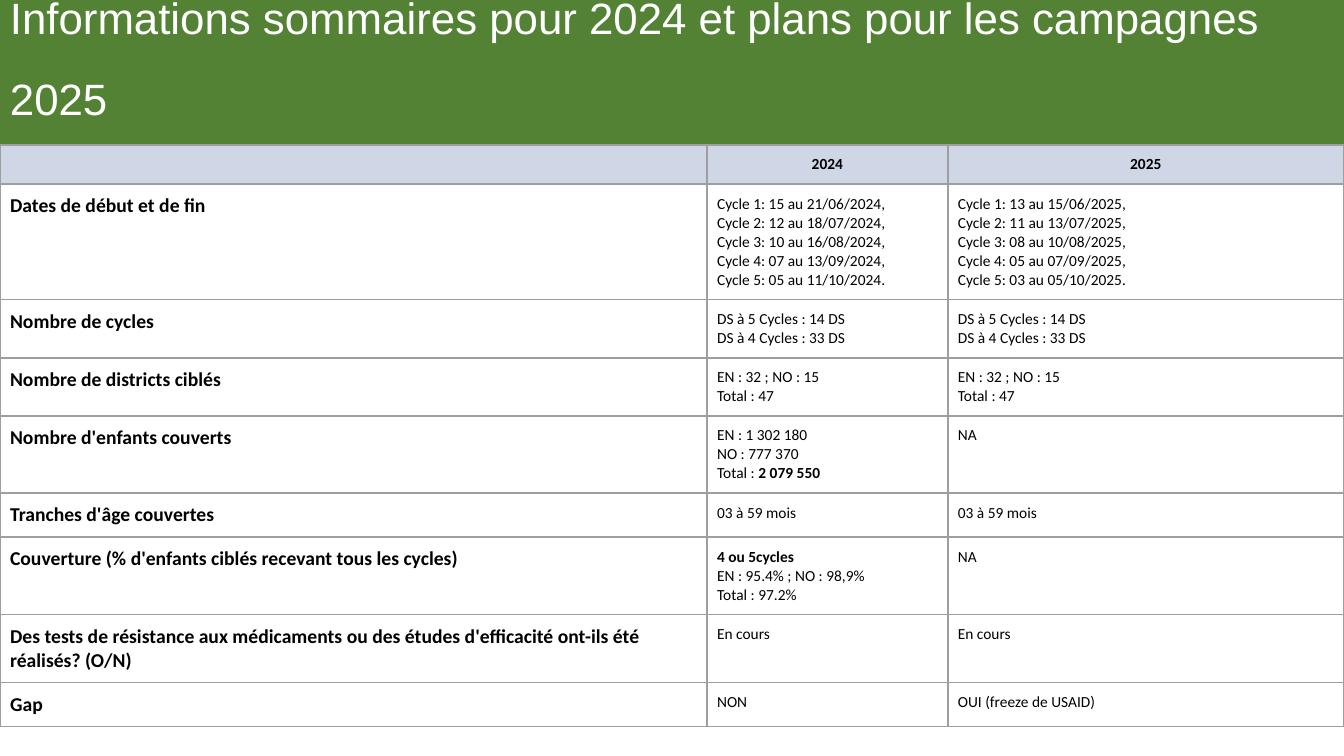
"""Build the slide that sums up the 2024 campaign and the plans for 2025."""
import lxml.etree
import pptx
import pptx.dml.color
import pptx.enum.shapes
import pptx.enum.text
import pptx.oxml.ns
import pptx.util

Pt = pptx.util.Pt
qn = pptx.oxml.ns.qn


def color(value):
    return pptx.dml.color.RGBColor.from_string(value)


def add_borders(cell, value, width):
    props = cell._tc.get_or_add_tcPr()
    for i, side in enumerate(("a:lnL", "a:lnR", "a:lnT", "a:lnB")):
        ln = lxml.etree.Element(qn(side), w=str(Pt(width)))
        fill = lxml.etree.SubElement(ln, qn("a:solidFill"))
        lxml.etree.SubElement(fill, qn("a:srgbClr"), val=value)
        props.insert(i, ln)


prs = pptx.Presentation()
prs.slide_width, prs.slide_height = Pt(960), Pt(540)
s = prs.slides.add_slide(prs.slide_layouts[6])

sp = s.shapes.add_shape(pptx.enum.shapes.MSO_SHAPE.RECTANGLE, 0, 0, Pt(960), Pt(104.4))
sp.shadow.inherit = False
sp.fill.solid()
sp.fill.fore_color.rgb = color("548235")
sp.line.fill.background()
tf = sp.text_frame
tf.word_wrap = True
tf.vertical_anchor = pptx.enum.text.MSO_ANCHOR.MIDDLE
p = tf.paragraphs[0]
p.alignment = pptx.enum.text.PP_ALIGN.LEFT
p.line_spacing = 0.9
r = p.add_run()
r.text = "Informations sommaires pour 2024 et plans pour les campagnes 2025"
r.font.name, r.font.size = "Arial", Pt(54)
r.font.color.rgb = color("FFFFFF")
r.font._element.set("baseline", "30000")

# Text between asterisks is bold.
rows = [
    (27.8, "", "*2024*", "*2025*"),
    (82, "*Dates de début et de fin*",
     "Cycle 1: 15 au 21/06/2024,\nCycle 2: 12 au 18/07/2024,\nCycle 3: 10 au 16/08/2024,\n"
     "Cycle 4: 07 au 13/09/2024,\nCycle 5: 05 au 11/10/2024.",
     "Cycle 1: 13 au 15/06/2025,\nCycle 2: 11 au 13/07/2025,\nCycle 3: 08 au 10/08/2025,\n"
     "Cycle 4: 05 au 07/09/2025,\nCycle 5: 03 au 05/10/2025."),
    (41.4, "*Nombre de cycles*",
     "DS à 5 Cycles : 14 DS\nDS à 4 Cycles : 33 DS", "DS à 5 Cycles : 14 DS\nDS à 4 Cycles : 33 DS"),
    (41.4, "*Nombre de districts ciblés*",
     "EN : 32 ; NO : 15\nTotal : 47", "EN : 32 ; NO : 15\nTotal : 47"),
    (55, "*Nombre d'enfants couverts*",
     "EN : 1 302 180\nNO : 777 370\nTotal : *2 079 550*", "NA"),
    (31.4, "*Tranches d'âge couvertes*", "03 à 59 mois", "03 à 59 mois"),
    (55, "*Couverture (% d'enfants ciblés recevant tous les cycles)*",
     "*4 ou 5cycles*\nEN : 95.4% ; NO : 98,9%\nTotal : 97.2%", "NA"),
    (48.6, "*Des tests de résistance aux médicaments ou des études d'efficacité "
     "ont-ils été réalisés? (O/N)*", "En cours", "En cours"),
    (31.4, "*Gap*", "NON", "OUI (freeze de USAID)"),
]
table = s.shapes.add_table(len(rows), 3, 0, Pt(103.6), Pt(960), Pt(414)).table
for column, width in zip(table.columns, (505, 172, 283)):
    column.width = Pt(width)

for i, (height, *texts) in enumerate(rows):
    table.rows[i].height = Pt(height)
    for j, text in enumerate(texts):
        cell = table.cell(i, j)
        cell.margin_left = cell.margin_right = cell.margin_top = cell.margin_bottom = Pt(7.2)
        if i == 0:
            cell.fill.solid()
            cell.fill.fore_color.rgb = color("CFD7E7")
        else:
            cell.fill.background()
        add_borders(cell, "9E9E9E", 1.5)
        tf = cell.text_frame
        for n, line in enumerate(text.split("\n")):
            p = tf.add_paragraph() if n else tf.paragraphs[0]
            if i == 0:
                p.alignment = pptx.enum.text.PP_ALIGN.CENTER
            p.font.name = "Calibri"
            p.font.size = Pt(14 if i and j == 0 else 11)
            p.font.color.rgb = color("000000")
            for k, part in enumerate(line.split("*")):
                if part:
                    r = p.add_run()
                    r.text = part
                    r.font.bold = k % 2 == 1

prs.save("out.pptx")
